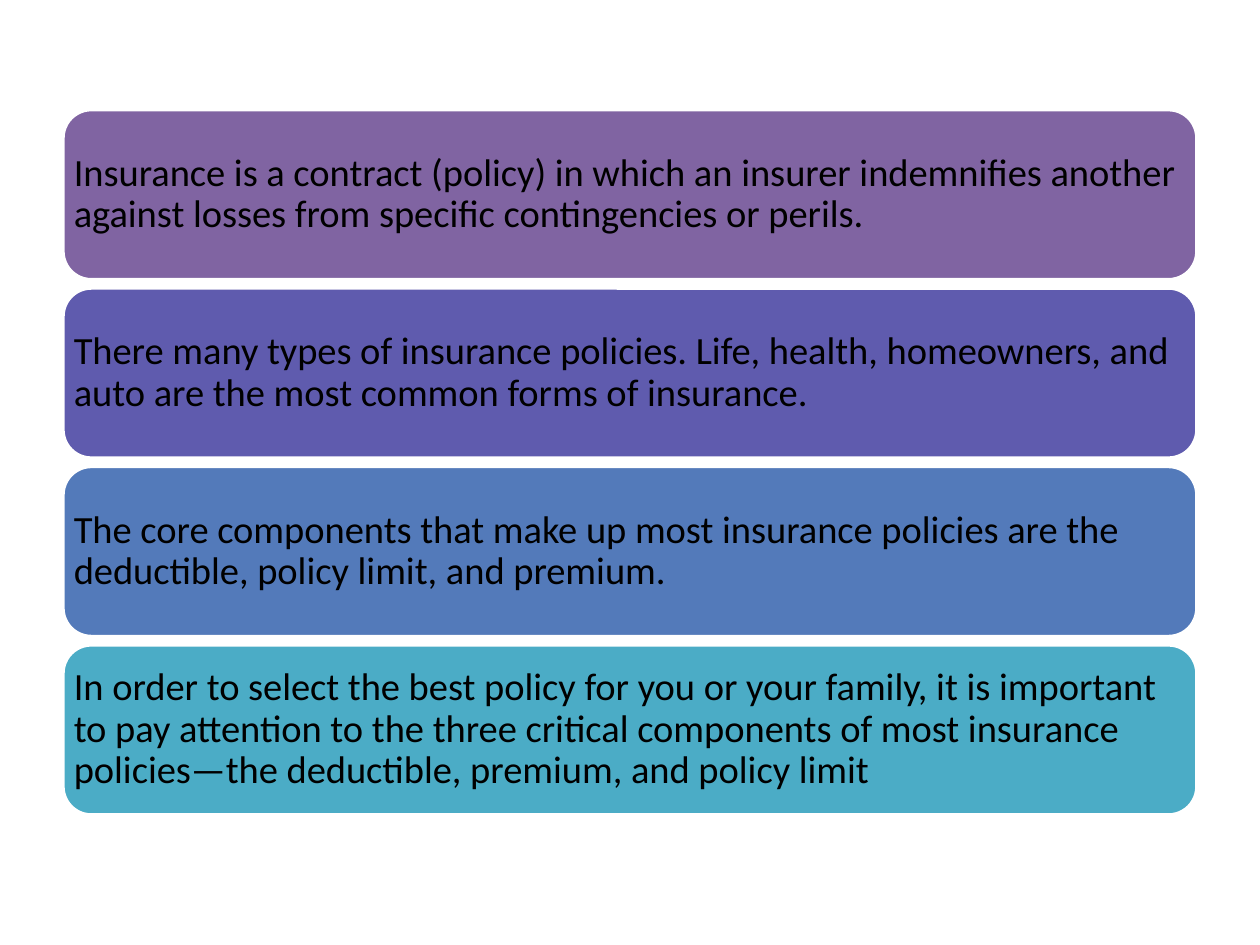
from pptx import Presentation
from pptx.dml.color import RGBColor
from pptx.enum import shapes, text
from pptx.util import Inches, Pt

WHITE = RGBColor(0xFF, 0xFF, 0xFF)
BLACK = RGBColor(0x00, 0x00, 0x00)
PURPLE = RGBColor(0x80, 0x64, 0xA2)
INDIGO = RGBColor(0x5F, 0x5B, 0xAE)
BLUE = RGBColor(0x53, 0x7A, 0xBA)
TEAL = RGBColor(0x4B, 0xAC, 0xC6)

SUMMARY = [
    (PURPLE, "Insurance is a contract (policy) in which an insurer indemnifies another "
             "against losses from specific contingencies or perils."),
    (INDIGO, "There many types of insurance policies. Life, health, homeowners, and auto "
             "are the most common forms of insurance."),
    (BLUE, "The core components that make up most insurance policies are the deductible, "
           "policy limit, and premium."),
    (TEAL, "In order to select the best policy for you or your family, it is important to "
           "pay attention to the three critical components of most insurance "
           "policies—the deductible, premium, and policy limit"),
]

LEFT, TOP, WIDTH, HEIGHT = 0.5, 0.87, 9, 1.35
PITCH = 1.416
INSET = Inches(0.02)


def add_bar(s, top, color, wording):
    sp = s.shapes.add_shape(shapes.MSO_SHAPE.ROUNDED_RECTANGLE, Inches(LEFT),
                            Inches(top), Inches(WIDTH), Inches(HEIGHT))
    sp.shadow.inherit = False
    sp.fill.solid()
    sp.fill.fore_color.rgb = color
    sp.line.color.rgb = WHITE
    sp.line.width = Pt(2)
    tf = sp.text_frame
    tf.word_wrap = True
    tf.vertical_anchor = text.MSO_ANCHOR.MIDDLE
    tf.margin_left = tf.margin_right = tf.margin_top = tf.margin_bottom = INSET
    p = tf.paragraphs[0]
    p.alignment = text.PP_ALIGN.LEFT
    p.line_spacing = 0.9
    r = p.add_run()
    r.text = wording
    r.font.name = "Calibri"
    r.font.size = Pt(22)
    r.font.color.rgb = BLACK


def main():
    prs = Presentation()
    prs.slide_width, prs.slide_height = Inches(10), Inches(7.5)
    s = prs.slides.add_slide(prs.slide_layouts[6])
    for i, (color, wording) in enumerate(SUMMARY):
        add_bar(s, TOP + i * PITCH, color, wording)
    prs.save("out.pptx")


if __name__ == "__main__":
    main()
